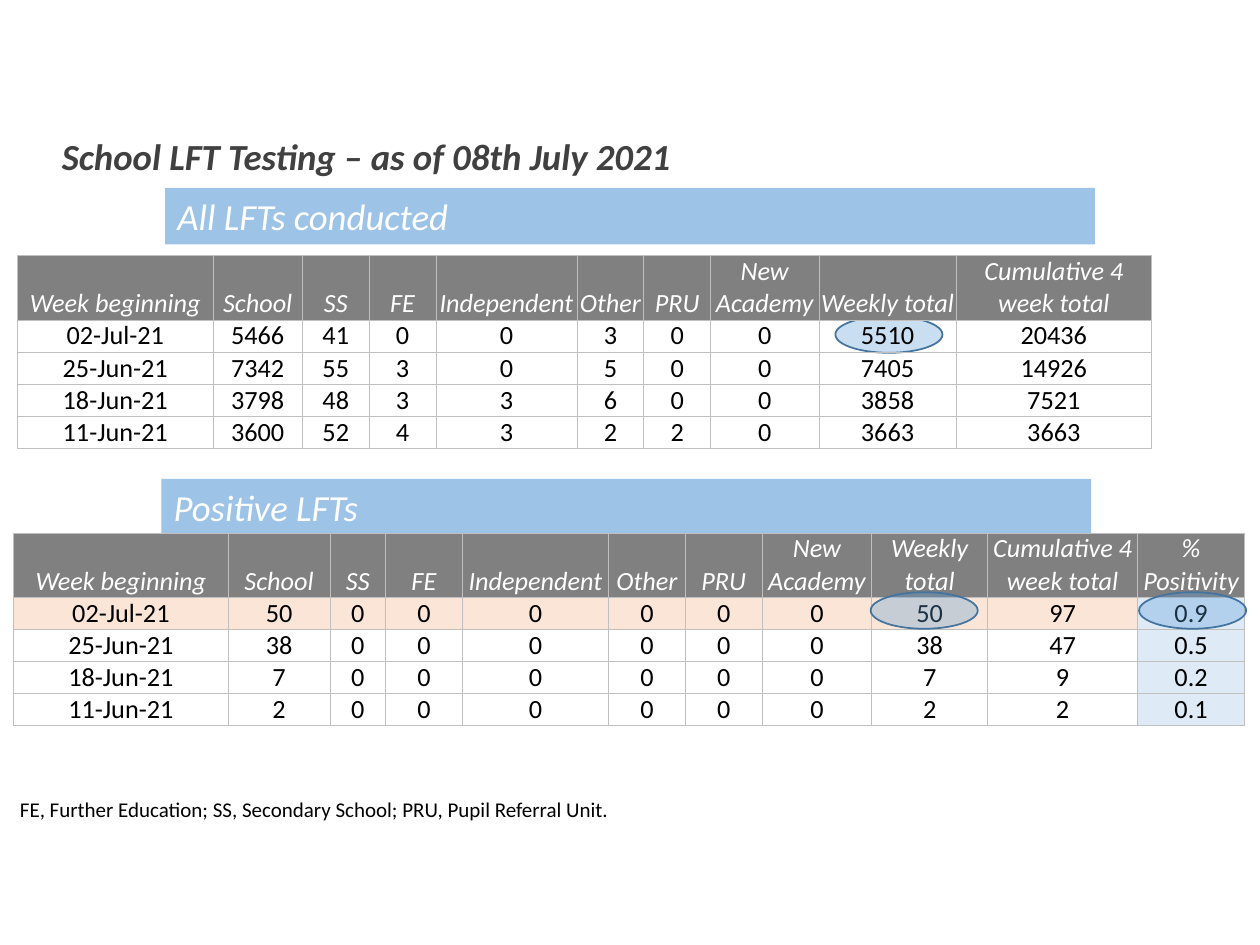
from lxml.etree import SubElement
from pptx import Presentation
from pptx.dml.color import RGBColor
from pptx.enum.shapes import MSO_SHAPE as Shape
from pptx.enum.text import MSO_ANCHOR as Anchor, MSO_AUTO_SIZE as AutoSize, PP_ALIGN as Align
from pptx.oxml.ns import qn
from pptx.util import Inches, Pt

HEADINGS = ["Week beginning", "School", "SS", "FE", "Independent", "Other", "PRU",
            "New Academy", "Weekly total", "Cumulative 4 week total"]
CONDUCTED = [
    ["02-Jul-21", 5466, 41, 0, 0, 3, 0, 0, 5510, 20436],
    ["25-Jun-21", 7342, 55, 3, 0, 5, 0, 0, 7405, 14926],
    ["18-Jun-21", 3798, 48, 3, 3, 6, 0, 0, 3858, 7521],
    ["11-Jun-21", 3600, 52, 4, 3, 2, 2, 0, 3663, 3663],
]
POSITIVE = [
    ["02-Jul-21", 50, 0, 0, 0, 0, 0, 0, 50, 97, 0.9],
    ["25-Jun-21", 38, 0, 0, 0, 0, 0, 0, 38, 47, 0.5],
    ["18-Jun-21", 7, 0, 0, 0, 0, 0, 0, 7, 9, 0.2],
    ["11-Jun-21", 2, 0, 0, 0, 0, 0, 0, 2, 2, 0.1],
]
CONDUCTED_WIDTHS = [1.55, 0.71, 0.53, 0.53, 1.12, 0.53, 0.53, 0.86, 1.09, 1.55]
POSITIVE_WIDTHS = [1.7, 0.81, 0.44, 0.61, 1.16, 0.61, 0.61, 0.87, 0.92, 1.19, 0.85]


def colour(value):
    return RGBColor.from_string(value)


def write(frame, text, size=15, color="000000", bold=False, italic=False, align=Align.LEFT):
    para = frame.paragraphs[0]
    para.alignment = align
    span = para.add_run()
    span.text = text
    font = span.font
    font.name, font.size, font.bold, font.italic = "Calibri", Pt(size), bold, italic
    font.color.rgb = colour(color)


def fit_frame(shape, wrap):
    frame = shape.text_frame
    frame.word_wrap = wrap
    frame.auto_size = AutoSize.SHAPE_TO_FIT_TEXT
    frame.vertical_anchor = Anchor.TOP
    return frame


def place_title(page, left, top, width, height):
    title = page.shapes.title
    title.left, title.top = Inches(left), Inches(top)
    title.width, title.height = Inches(width), Inches(height)
    write(fit_frame(title, False), "School LFT Testing – as of 08th July 2021",
          size=21, color="404040", bold=True, italic=True)


def add_footnote(page, left, top, width, height):
    box = page.shapes.add_textbox(Inches(left), Inches(top), Inches(width), Inches(height))
    write(fit_frame(box, False),
          "FE, Further Education; SS, Secondary School; PRU, Pupil Referral Unit.", size=12)


def add_filled_shape(page, kind, left, top, width, height, fill):
    shape = page.shapes.add_shape(kind, Inches(left), Inches(top), Inches(width), Inches(height))
    shape.shadow.inherit = False
    shape.fill.solid()
    shape.fill.fore_color.rgb = colour(fill)
    return shape


def add_banner(page, text, left, top, width=7.38, height=0.45):
    banner = add_filled_shape(page, Shape.RECTANGLE, left, top, width, height, "9DC3E6")
    banner.line.fill.background()
    write(fit_frame(banner, True), text, size=21, color="FFFFFF", italic=True)


def add_highlight(page, left, top, width=0.85, height=0.29):
    ring = add_filled_shape(page, Shape.OVAL, left, top, width, height, "5B9BD5")
    ring.line.color.rgb = colour("43739E")
    ring.line.width = Pt(1)
    shade = ring._element.spPr.find(qn("a:solidFill"))[0]
    SubElement(shade, qn("a:alpha"), val="32000")


def outline_cell(cell):
    properties = cell._tc.get_or_add_tcPr()
    for position, side in enumerate(("a:lnL", "a:lnR", "a:lnT", "a:lnB")):
        edge = SubElement(properties, qn(side), w=str(Pt(0.5)))
        properties.insert(position, edge)
        SubElement(SubElement(edge, qn("a:solidFill")), qn("a:srgbClr"), val="BFBFBF")


def format_cell(cell, text, fill=None, anchor=Anchor.BOTTOM, **text_format):
    cell.margin_left = cell.margin_right = Inches(0.01)
    cell.margin_top = cell.margin_bottom = 0
    cell.vertical_anchor = anchor
    if fill:
        cell.fill.solid()
        cell.fill.fore_color.rgb = colour(fill)
    else:
        cell.fill.background()
    outline_cell(cell)
    write(cell.text_frame, text, align=Align.CENTER, **text_format)


def add_results(page, left, top, widths, headings, records, height=1.53,
                anchor=Anchor.BOTTOM, body_fill=lambda row, column: None):
    table = page.shapes.add_table(len(records) + 1, len(headings), Inches(left), Inches(top),
                                  Inches(sum(widths)), Inches(height)).table
    table.first_row = table.horz_banding = False
    for column, width in zip(table.columns, widths):
        column.width = Inches(width)
    line_height = height / (len(records) + 2)
    for index, row in enumerate(table.rows):
        row.height = Inches(line_height * (1 if index else 2))
    for column, heading in enumerate(headings):
        format_cell(table.cell(0, column), heading, fill="808080", color="FFFFFF", italic=True)
    for row, record in enumerate(records, 1):
        for column, value in enumerate(record):
            format_cell(table.cell(row, column), str(value), body_fill(row, column), anchor)


def positive_fill(row, column):
    if column == len(HEADINGS):
        return "DEEBF7"
    return "FBE5D6" if row == 1 else None


def main():
    deck = Presentation()
    deck.slide_width, deck.slide_height = Inches(10), Inches(7.5)
    page = deck.slides.add_slide(deck.slide_layouts[5])
    place_title(page, 0.39, 1.01, 5.09, 0.45)
    add_footnote(page, 0.06, 6.27, 4.92, 0.3)
    add_banner(page, "All LFTs conducted", 1.31, 1.49)
    add_banner(page, "Positive LFTs", 1.28, 3.8)
    add_highlight(page, 6.63, 2.51)
    add_results(page, 0.14, 2.03, CONDUCTED_WIDTHS, HEADINGS, CONDUCTED)
    add_results(page, 0.11, 4.23, POSITIVE_WIDTHS, HEADINGS + ["% Positivity"], POSITIVE,
                anchor=Anchor.MIDDLE, body_fill=positive_fill)
    for left in (6.91, 9.04):
        add_highlight(page, left, 4.7)
    deck.save("out.pptx")


if __name__ == "__main__":
    main()
